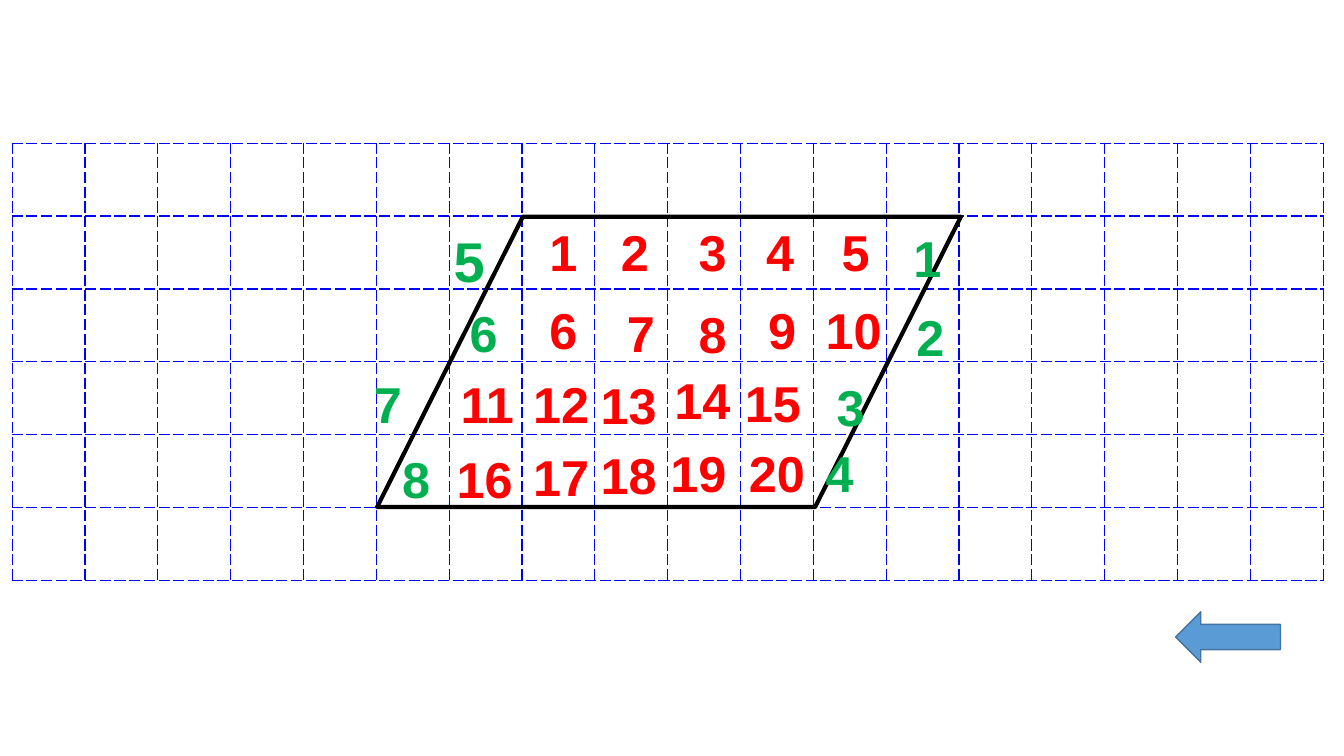
import pptx
import pptx.dml.color
import pptx.enum.dml
import pptx.enum.shapes
import pptx.enum.text
import pptx.oxml
import pptx.util
from dataclasses import dataclass
from pptx.util import Inches

SHAPES = pptx.enum.shapes.MSO_SHAPE
NAMESPACE = "http://schemas.openxmlformats.org/drawingml/2006/main"


@dataclass(frozen=True)
class Theme:
    font: str = "Arial"
    grid: str = "0000FF"
    outline: str = "000000"
    whole: str = "FF0000"
    partial: str = "00B050"
    arrow: str = "5B9BD5"
    arrow_edge: str = "43739E"
    number_size: int = 36
    large_size: int = 40


THEME = Theme()
GRID_COLUMNS, GRID_ROWS = 18, 6

# Whole squares, counted from 1: left, top, width
WHOLE_SQUARES = [
    (5.35, 2.14, 0.3), (6.06, 2.14, 0.46), (6.83, 2.14, 0.83),
    (7.5, 2.14, 0.3), (8.25, 2.14, 0.3),
    (5.35, 2.91, 0.3), (6.12, 2.94, 0.3), (6.83, 2.95, 0.3),
    (7.52, 2.91, 0.3), (8.09, 2.91, 0.87),
    (4.47, 3.65, 0.87), (5.19, 3.65, 0.87), (5.86, 3.66, 0.87),
    (6.59, 3.61, 0.87), (7.29, 3.64, 0.87),
    (4.43, 4.39, 0.91), (5.19, 4.37, 0.87), (5.86, 4.35, 0.87),
    (6.55, 4.33, 0.87), (7.33, 4.33, 0.87),
]

# Partial squares along the slanted sides: left, top, width
PARTIAL_SQUARES = [
    (8.96, 2.2, 0.87), (8.99, 2.98, 0.87), (8.2, 3.68, 0.79), (8.09, 4.33, 0.79),
    (4.4, 2.2, 0.79), (4.56, 2.94, 0.79), (3.61, 3.65, 0.79), (3.89, 4.39, 0.79),
]
LARGE_PARTIAL = 5


def rgb(colour):
    return pptx.dml.color.RGBColor.from_string(colour)


def apply_format(target, values):
    for name, value in values.items():
        setattr(target, name, value)


def add_dashed_borders(cell):
    properties = cell._tc.get_or_add_tcPr()
    for side in ("lnL", "lnR", "lnT", "lnB"):
        properties.append(pptx.oxml.parse_xml(
            f'<a:{side} xmlns:a="{NAMESPACE}" w="{pptx.util.Pt(1)}">'
            f'<a:solidFill><a:srgbClr val="{THEME.grid}"/></a:solidFill>'
            f'<a:prstDash val="lgDash"/></a:{side}>'))


def add_grid(page, left, top, width, height):
    frame = page.shapes.add_table(GRID_ROWS, GRID_COLUMNS, Inches(left), Inches(top),
                                  Inches(width), Inches(height))
    apply_format(frame.table, {"first_row": False, "horz_banding": False})
    for cell in frame.table.iter_cells():
        add_dashed_borders(cell)
        cell.fill.background()


def add_outlined_shape(page, kind, bounds, line, weight, fill=None):
    shape = page.shapes.add_shape(kind, *map(Inches, bounds))
    shape.shadow.inherit = False
    if fill:
        shape.fill.solid()
        shape.fill.fore_color.rgb = rgb(fill)
    else:
        shape.fill.background()
    shape.line.color.rgb = rgb(line)
    shape.line.width = pptx.util.Pt(weight)
    return shape


def add_number(page, number, place, colour, size=THEME.number_size):
    left, top, width = place
    height = 0.77 if size == THEME.large_size else 0.71
    box = page.shapes.add_textbox(*map(Inches, (left, top, width, height)))
    apply_format(box.text_frame, {
        "word_wrap": True,
        "auto_size": pptx.enum.text.MSO_AUTO_SIZE.SHAPE_TO_FIT_TEXT,
        "vertical_anchor": pptx.enum.text.MSO_ANCHOR.MIDDLE,
    })
    span = box.text_frame.paragraphs[0].add_run()
    span.text = str(number)
    apply_format(span.font, {"name": THEME.font, "size": pptx.util.Pt(size), "bold": True})
    span.font.color.rgb = rgb(colour)


def main():
    deck = pptx.Presentation()
    apply_format(deck, {"slide_width": Inches(13.33), "slide_height": Inches(7.5)})
    page = deck.slides.add_slide(deck.slide_layouts[6])

    # Squared paper and the parallelogram on it
    add_grid(page, 0.12, 1.42, 13.01, 4.34)
    parallelogram = add_outlined_shape(page, SHAPES.PARALLELOGRAM,
                                       (3.74, 2.15, 5.79, 2.88), THEME.outline, 3)
    parallelogram.adjustments[0] = 0.502

    # Counted squares
    for number, place in enumerate(WHOLE_SQUARES, 1):
        add_number(page, number, place, THEME.whole)
    for number, place in enumerate(PARTIAL_SQUARES, 1):
        size = THEME.large_size if number == LARGE_PARTIAL else THEME.number_size
        add_number(page, number, place, THEME.partial, size)

    # Back arrow
    add_outlined_shape(page, SHAPES.LEFT_ARROW, (11.66, 6.07, 1.04, 0.5),
                       THEME.arrow_edge, 1, THEME.arrow)

    deck.save("out.pptx")


if __name__ == "__main__":
    main()
